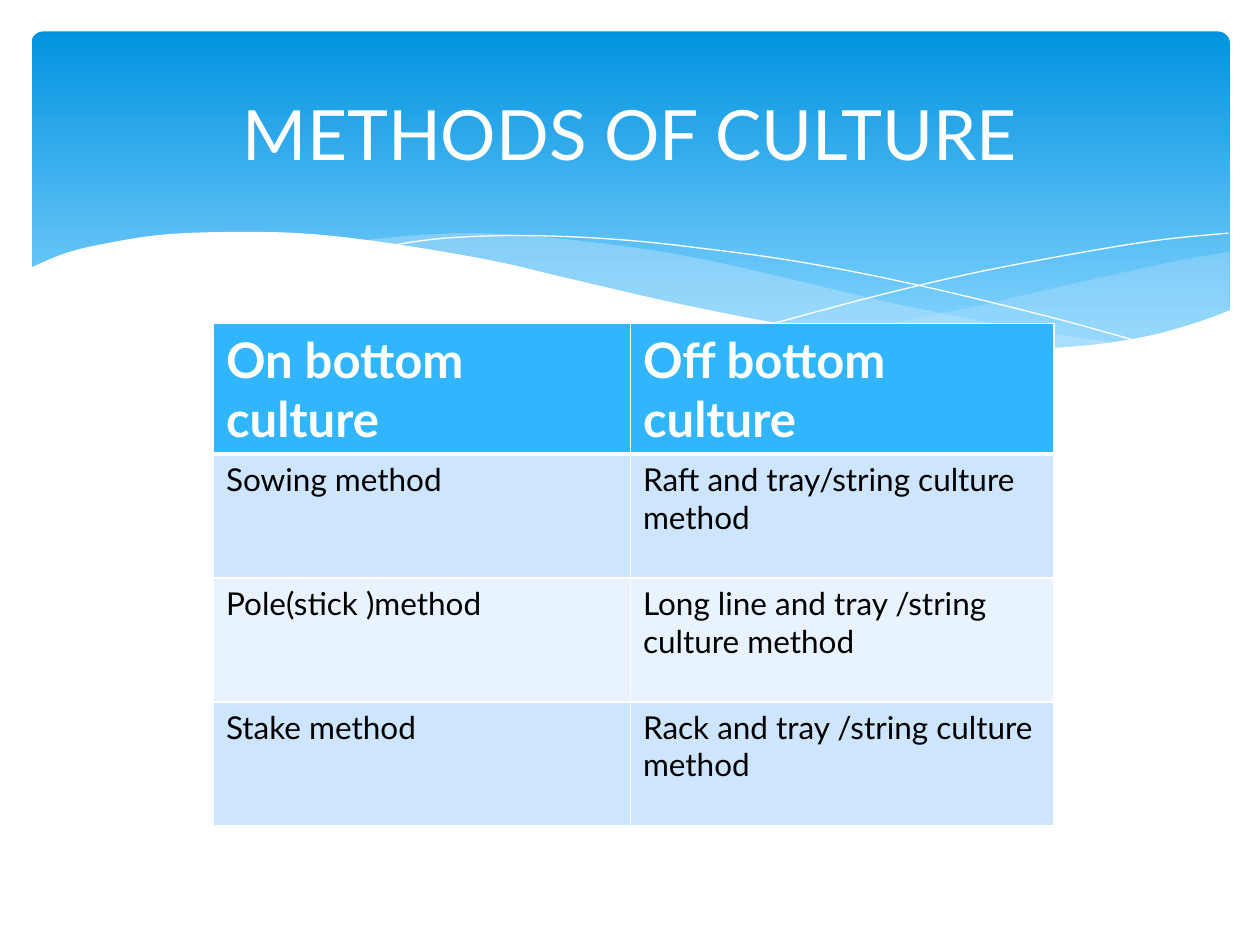
from dataclasses import dataclass
from typing import Optional

from lxml import etree
from pptx import Presentation
from pptx.dml.color import RGBColor
from pptx.enum.shapes import MSO_SHAPE
from pptx.enum.text import MSO_ANCHOR, PP_ALIGN
from pptx.oxml.ns import qn
from pptx.util import Pt

ROUNDED_RECTANGLE = MSO_SHAPE.ROUNDED_RECTANGLE
MIDDLE = MSO_ANCHOR.MIDDLE
CENTER = PP_ALIGN.CENTER

WHITE = RGBColor(0xFF, 0xFF, 0xFF)
BLACK = RGBColor(0, 0, 0)
DEEP_BLUE = RGBColor(0x02, 0x93, 0xE0)
LIGHT_BLUE = RGBColor(0x83, 0xD3, 0xFE)
WAVE_BLUE = RGBColor(0xC6, 0xE7, 0xFC)
HEADER_BLUE = RGBColor(0x31, 0xB6, 0xFD)
BANDS = (RGBColor(0xCE, 0xE5, 0xFE), RGBColor(0xE8, 0xF3, 0xFF))

FONT = "Lato"
UNITS_PER_POINT = 100
CURVE_STEPS = 6

Point = tuple[float, float]


@dataclass
class Wave:
    """Smooth curves joined end to end; filled when it has a fill colour."""
    curves: list[list[Point]]
    fill: Optional[RGBColor] = None
    opacity: int = 100


WAVES = [
    # Right swell
    Wave([[(702.7, 144), (673.2, 149), (619.9, 160.6), (560.9, 174.2),
           (508.3, 185), (475.9, 190.8)],
          [(475.9, 190.8), (517.7, 195.8), (553.7, 199.4), (586.1, 200.2),
           (621.4, 198), (651.6, 193.7), (678.2, 186.5), (702.7, 177.8)]],
         WAVE_BLUE, 29),
    # Long swell
    Wave([[(205.9, 137.5), (236.2, 134.6), (273.6, 133.2), (318.2, 136.1),
           (370.1, 142.6), (409.7, 149.8), (452.9, 159.8), (508.3, 172.8),
           (558, 182.9), (602.6, 190.8), (643, 196.6)],
          [(643, 196.6), (610.6, 199.4), (581, 200.2), (547.9, 199.4),
           (510.5, 195.8), (468, 190.1), (420.5, 181.4), (381.6, 172.8),
           (323.3, 159.8), (275.8, 149), (232.6, 141.1), (205.9, 137.5)]],
         WAVE_BLUE, 40),
    # Falling and rising hairlines
    Wave([[(222.5, 140.4), (254.2, 136.1), (299.5, 134.6), (352.1, 136.8),
           (400.3, 141.8), (457.9, 149.8), (523.4, 162.7), (598.3, 180.7),
           (653, 195.8)]]),
    Wave([[(441.4, 185), (500.4, 169.2), (558.7, 155.5), (623.5, 143.3),
           (665.3, 136.8), (702, 133.2)]]),
    # White wave that cuts the lower edge of the banner
    Wave([[(16.6, 153.4), (37.4, 144.7), (61.2, 139), (95, 133.9),
           (139, 132.5), (180, 133.9), (227.5, 139.7), (281.5, 149),
           (321.8, 158.4), (380.9, 172.1), (434.2, 182.9), (481, 190.8),
           (535.7, 197.3), (582.5, 199.4), (621.4, 197.3), (655.2, 192.2),
           (684, 184.3), (703.4, 177.1)],
          [(703.4, 236.9), (16.6, 236.9)]],
         WHITE),
]

TABLE_ROWS = [
    ("On bottom culture", "Off bottom culture"),
    ("Sowing method", "Raft and tray/string culture method"),
    ("Pole(stick )method", "Long line and tray /string culture method"),
    ("Stake method", "Rack and tray /string culture method"),
]
COLUMN_WIDTHS = (238.3, 241.9)
ROW_HEIGHT = 70.8


def smooth_curve(knots: list[Point]) -> list[Point]:
    """Sample a Catmull-Rom spline through the knots."""
    padded = [knots[0], *knots, knots[-1]]
    points = [knots[0]]
    for a, b, c, d in zip(padded, padded[1:], padded[2:], padded[3:]):
        for step in range(1, CURVE_STEPS + 1):
            t = step / CURVE_STEPS
            points.append(tuple(
                q + t * (r - p) / 2
                + t ** 2 * (2 * p - 5 * q + 4 * r - s) / 2
                + t ** 3 * (3 * q - p - 3 * r + s) / 2
                for p, q, r, s in zip(a, b, c, d)))
    return points


def draw_banner(slide) -> None:
    banner = slide.shapes.add_shape(
        ROUNDED_RECTANGLE, Pt(18), Pt(18), Pt(684.7), Pt(194.4))
    banner.adjustments[0] = 0.034
    banner.shadow.inherit = False
    banner.line.fill.background()
    banner.fill.gradient()
    banner.fill.gradient_angle = 270
    stops = ((0, DEEP_BLUE), (0.9, LIGHT_BLUE))
    for stop, (position, color) in zip(banner.fill.gradient_stops, stops):
        stop.position = position
        stop.color.rgb = color


def draw_wave(slide, wave: Wave) -> None:
    points = [(x * UNITS_PER_POINT, y * UNITS_PER_POINT)
              for curve in wave.curves for x, y in smooth_curve(curve)]
    builder = slide.shapes.build_freeform(
        *points[0], scale=Pt(1) / UNITS_PER_POINT)
    builder.add_line_segments(points[1:], close=wave.fill is not None)
    shape = builder.convert_to_shape()
    shape.shadow.inherit = False
    if wave.fill is None:
        shape.fill.background()
        shape.line.color.rgb = WHITE
        shape.line.width = Pt(0)
        return
    shape.line.fill.background()
    shape.fill.solid()
    shape.fill.fore_color.rgb = wave.fill
    if wave.opacity < 100:
        color = shape.element.spPr.find(qn("a:solidFill"))[0]
        etree.SubElement(color, qn("a:alpha"), val=str(wave.opacity * 1000))


def write_title(slide) -> None:
    title = slide.shapes.title
    title.left, title.top = Pt(36), Pt(26.6)
    title.width, title.height = Pt(648), Pt(98.6)
    title.text_frame.text = "METHODS OF CULTURE"
    title.text_frame.vertical_anchor = MIDDLE
    paragraph = title.text_frame.paragraphs[0]
    paragraph.alignment = CENTER
    font = paragraph.runs[0].font
    font.name, font.size, font.color.rgb = FONT, Pt(39.6), WHITE
    # Bring the title in front of the banner
    title.element.getparent().append(title.element)


def set_borders(cell, top: float, bottom: float) -> None:
    properties = cell._tc.get_or_add_tcPr()
    for side, width in (("L", 1), ("R", 1), ("T", top), ("B", bottom)):
        line = etree.SubElement(properties, qn(f"a:ln{side}"), w=str(Pt(width)))
        fill = etree.SubElement(line, qn("a:solidFill"))
        etree.SubElement(fill, qn("a:srgbClr"), val=str(WHITE))


def draw_table(slide) -> None:
    table = slide.shapes.add_table(
        len(TABLE_ROWS), len(COLUMN_WIDTHS), Pt(122), Pt(185),
        Pt(sum(COLUMN_WIDTHS)), Pt(ROW_HEIGHT * len(TABLE_ROWS))).table
    for column, width in zip(table.columns, COLUMN_WIDTHS):
        column.width = Pt(width)
    for row_index, texts in enumerate(TABLE_ROWS):
        header = row_index == 0
        table.rows[row_index].height = Pt(ROW_HEIGHT)
        for column_index, text in enumerate(texts):
            cell = table.cell(row_index, column_index)
            set_borders(cell, top=3 if row_index == 1 else 1,
                        bottom=3 if header else 1)
            cell.fill.solid()
            cell.fill.fore_color.rgb = (
                HEADER_BLUE if header else BANDS[(row_index - 1) % 2])
            cell.text_frame.text = text
            font = cell.text_frame.paragraphs[0].runs[0].font
            font.name, font.bold = FONT, header
            font.size = Pt(28 if header else 18)
            font.color.rgb = WHITE if header else BLACK


def main() -> None:
    presentation = Presentation()
    presentation.slide_width, presentation.slide_height = Pt(720), Pt(540)
    slide = presentation.slides.add_slide(presentation.slide_layouts[5])
    draw_banner(slide)
    for wave in WAVES:
        draw_wave(slide, wave)
    write_title(slide)
    draw_table(slide)
    presentation.save("out.pptx")


if __name__ == "__main__":
    main()
